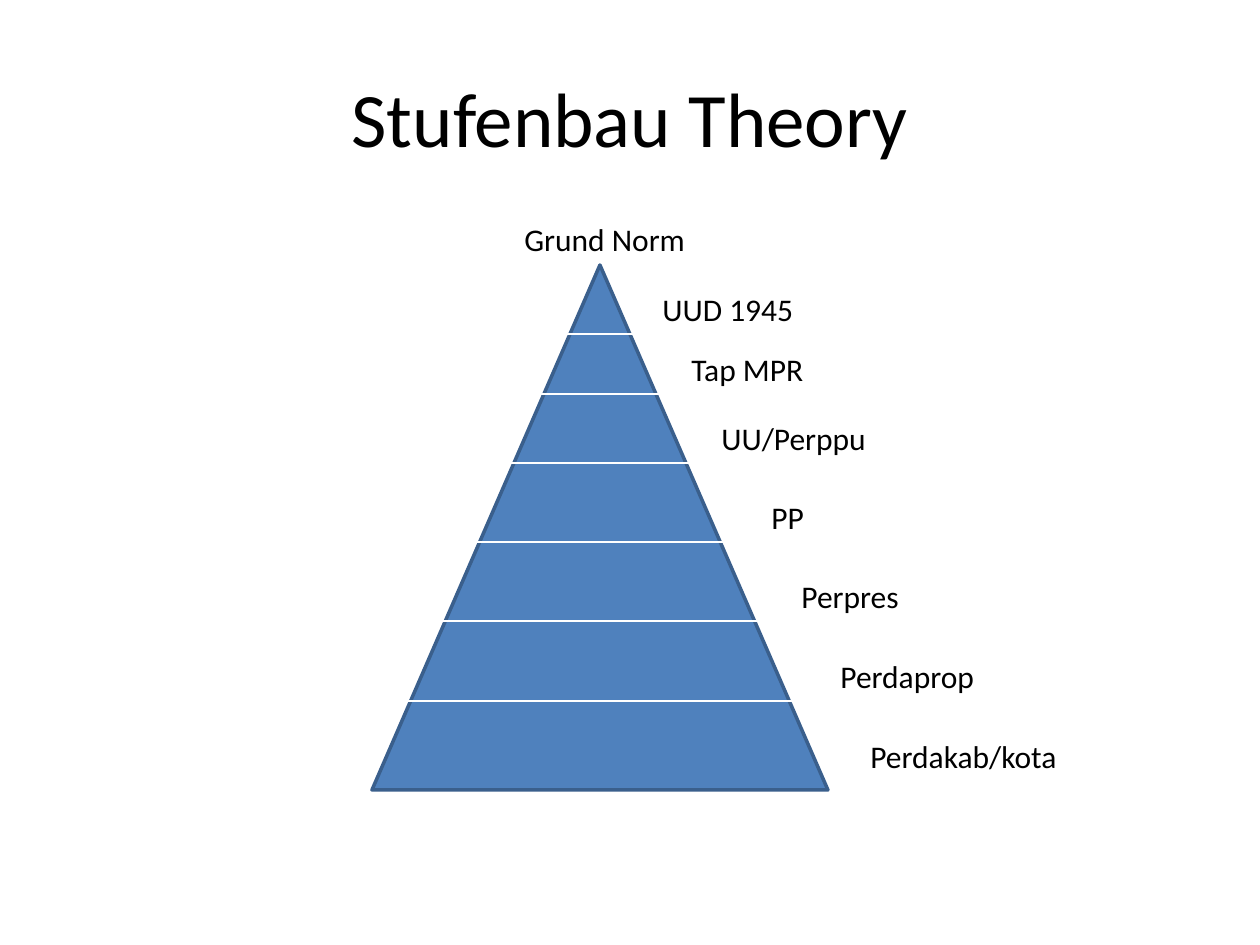
import pptx
import pptx.util
import pptx.dml.color
import pptx.enum.shapes
import pptx.enum.text
import pptx.oxml.ns
from lxml import etree

SCALE = 914400 // 126  # EMU per px
FONT = "Calibri"
COLORS = {"text": "000000", "fill": "4F81BD", "edge": "3A5F8C", "rule": "FFFFFF"}
LABEL_HEIGHT = 50

# Each level: label, label left, top, width, then the rule below it (left, right)
LEVELS = [
    ("UUD 1945", 650, 284, 158, (541, 640)),
    ("Tap MPR", 679, 344, 139, (530, 669)),
    ("UU/Perppu", 709, 413, 171, (501, 689)),
    ("PP", 759, 492, 58, (471, 730)),
    ("Perpres", 789, 571, 132, (441, 769)),
    ("Perdaprop", 828, 651, 160, (402, 799)),
    ("Perdakab/kota", 858, 731, 213, None),
]


def px(*sizes):
    return [pptx.util.Emu(size * SCALE) for size in sizes]


def color(name):
    return pptx.dml.color.RGBColor.from_string(COLORS[name])


def style_text(par, size):
    par.font.name = FONT
    par.font.size = pptx.util.Pt(size)
    par.font.color.rgb = color("text")


def style_line(line, name, width):
    line.color.rgb = color(name)
    line.width = pptx.util.Pt(width)


def set_title(slide, text):
    title = slide.shapes.title
    title.left, title.top, title.width, title.height = px(63, 38, 1134, 157)
    frame = title.text_frame
    frame.text = text
    frame.vertical_anchor = pptx.enum.text.MSO_ANCHOR.MIDDLE
    par = frame.paragraphs[0]
    par.alignment = pptx.enum.text.PP_ALIGN.CENTER
    style_text(par, 44)


def add_peak(slide):
    kind = pptx.enum.shapes.MSO_SHAPE.ISOSCELES_TRIANGLE
    peak = slide.shapes.add_shape(kind, *px(372, 265, 456, 525))
    peak.shadow.inherit = False
    peak.fill.solid()
    peak.fill.fore_color.rgb = color("fill")
    style_line(peak.line, "edge", 2)


def add_rule(slide, left, right, top):
    kind = pptx.enum.shapes.MSO_CONNECTOR.STRAIGHT
    rule = slide.shapes.add_connector(kind, *px(left, top, right, top))
    style_line(rule.line, "rule", 0.75)
    etree.SubElement(rule._element.spPr, pptx.oxml.ns.qn("a:effectLst"))


def add_label(slide, text, left, top, width):
    box = slide.shapes.add_textbox(*px(left, top, width, LABEL_HEIGHT))
    frame = box.text_frame
    frame.text = text
    frame.word_wrap = False
    frame.auto_size = pptx.enum.text.MSO_AUTO_SIZE.SHAPE_TO_FIT_TEXT
    par = frame.paragraphs[0]
    par.alignment = pptx.enum.text.PP_ALIGN.LEFT
    style_text(par, 18)


def main():
    deck = pptx.Presentation()
    deck.slide_width, deck.slide_height = px(1260, 945)
    slide = deck.slides.add_slide(deck.slide_layouts[5])
    set_title(slide, "Stufenbau Theory")

    # Pyramid with its dividing rules
    add_peak(slide)
    for _, _, top, _, rule in LEVELS:
        if rule:
            add_rule(slide, *rule, top + LABEL_HEIGHT)

    # Labels from the peak down
    add_label(slide, "Grund Norm", 512, 214, 188)
    for text, left, top, width, _ in LEVELS:
        add_label(slide, text, left, top, width)

    deck.save("out.pptx")


if __name__ == "__main__":
    main()
